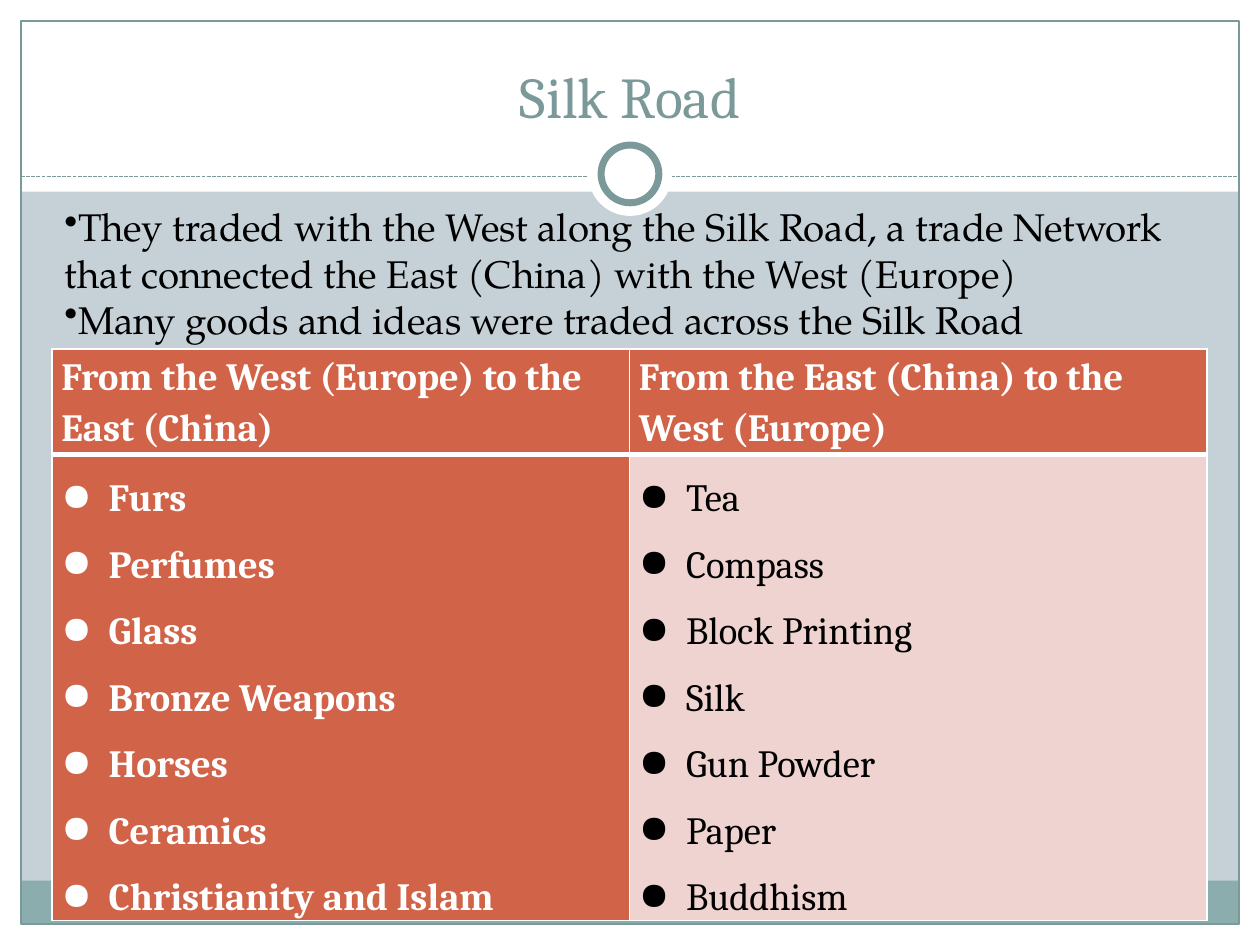
import pptx
import pptx.dml.color
import pptx.enum.dml
import pptx.enum.shapes
import pptx.enum.text
import pptx.oxml
import pptx.oxml.ns
import pptx.util

Pt = pptx.util.Pt
RGBColor = pptx.dml.color.RGBColor
SHAPE = pptx.enum.shapes.MSO_SHAPE
ANCHOR = pptx.enum.text.MSO_ANCHOR
ALIGN = pptx.enum.text.PP_ALIGN

WHITE = RGBColor(0xFF, 0xFF, 0xFF)
BLACK = RGBColor(0, 0, 0)
MIST = RGBColor(0xC5, 0xD1, 0xD7)
SAGE = RGBColor(0x7C, 0x99, 0x9A)
TEAL = RGBColor(0x8C, 0xAD, 0xAE)
RUST = RGBColor(0xD1, 0x63, 0x49)
BLUSH = RGBColor(0xEE, 0xD3, 0xD0)

WIDTH, HEIGHT, EDGE = 720, 540, 12
RULE_Y = 100.8
SERIF, PAGELLA = "Cambria", "TeX Gyre Pagella"

FACTS = [
    "They traded with the West along the Silk Road, a trade Network "
    "that connected the East (China) with the West (Europe)",
    "Many goods and ideas were traded across the Silk Road",
]
HEADINGS = ["From the West (Europe) to the East (China)",
            "From the East (China) to the West (Europe)"]
WEST_GOODS = ["Furs", "Perfumes", "Glass", "Bronze Weapons", "Horses",
              "Ceramics", "Christianity and Islam"]
EAST_GOODS = ["Tea", "Compass", "Block Printing", "Silk", "Gun Powder",
              "Paper", "Buddhism"]


def apply(target, values):
    for name, value in values.items():
        setattr(target, name, value)


def place(target, left, top, width, height):
    apply(target, {"left": Pt(left), "top": Pt(top),
                   "width": Pt(width), "height": Pt(height)})


def add_xml(parent, tag, content="", **attributes):
    listed = "".join(f' {name}="{value}"' for name, value in attributes.items())
    namespace = pptx.oxml.ns.nsdecls("a")
    parent.append(pptx.oxml.parse_xml(
        f"<a:{tag} {namespace}{listed}>{content}</a:{tag}>"))


def add_panel(slide, kind, box, fill=None, line=None, weight=0.75):
    panel = slide.shapes.add_shape(kind, *map(Pt, box))
    panel.shadow.inherit = False
    if fill is None:
        panel.fill.background()
    else:
        panel.fill.solid()
        panel.fill.fore_color.rgb = fill
    if line is None:
        panel.line.fill.background()
    else:
        panel.line.color.rgb = line
        panel.line.width = Pt(weight)


def add_rule(slide):
    rule = slide.shapes.add_connector(
        pptx.enum.shapes.MSO_CONNECTOR.STRAIGHT,
        Pt(EDGE), Pt(RULE_Y), Pt(WIDTH - EDGE), Pt(RULE_Y))
    rule.line.color.rgb = SAGE
    apply(rule.line, {"width": Pt(0.75),
                      "dash_style": pptx.enum.dml.MSO_LINE.SQUARE_DOT})
    add_xml(rule._element.spPr, "effectLst")


def add_ring(slide):
    for diameter, outline in ((48, None), (33, SAGE)):
        box = ((WIDTH - diameter) / 2, 99.4 - diameter / 2, diameter, diameter)
        add_panel(slide, SHAPE.OVAL, box, WHITE, outline, 4)


def write_lines(frame, lines, font, color, bullet=None, indent=0, spacing=None):
    for index, line in enumerate(lines):
        paragraph = frame.paragraphs[0] if index == 0 else frame.add_paragraph()
        run = paragraph.add_run()
        run.text = line
        apply(run.font, font)
        run.font.color.rgb = color
        apply(paragraph, spacing or {})
        if bullet:
            properties = paragraph._p.get_or_add_pPr()
            properties.set("marL", str(Pt(indent)))
            properties.set("indent", str(-Pt(indent)))
            add_xml(properties, "buChar", char=bullet)


def format_cell(cell, fill, top, bottom):
    apply(cell, {"margin_left": Pt(5.4), "margin_right": Pt(5.4),
                 "margin_top": 0, "margin_bottom": 0})
    properties = cell._tc.get_or_add_tcPr()
    for side, weight in {"L": 1, "R": 1, "T": top, "B": bottom}.items():
        add_xml(properties, f"ln{side}",
                f'<a:solidFill><a:srgbClr val="{WHITE}"/></a:solidFill>',
                w=Pt(weight))
    cell.fill.solid()
    cell.fill.fore_color.rgb = fill


def add_trade_table(slide):
    table = slide.shapes.add_table(
        2, 2, Pt(29.7), Pt(199.4), Pt(660), Pt(231)).table
    for row, height in zip(table.rows, (60.5, 170.6)):
        row.height = Pt(height)
    bold = {"name": SERIF, "size": Pt(22), "bold": True}
    regular = {**bold, "bold": False}
    columns = zip(HEADINGS, (WEST_GOODS, EAST_GOODS), (bold, regular),
                  (WHITE, BLACK), (RUST, BLUSH))
    for index, (heading, goods, font, color, fill) in enumerate(columns):
        header, body = table.cell(0, index), table.cell(1, index)
        format_cell(header, RUST, 1, 3)
        write_lines(header.text_frame, [heading], bold, WHITE,
                    spacing={"line_spacing": 1.15, "space_after": Pt(10)})
        format_cell(body, fill, 3, 1)
        write_lines(body.text_frame, goods, font, color, "●", 27,
                    {"line_spacing": 1.5})


def add_facts(slide):
    facts = slide.shapes.add_textbox(Pt(29.7), Pt(112.3), Pt(666), Pt(87))
    apply(facts.text_frame, {"word_wrap": True,
                             "vertical_anchor": ANCHOR.MIDDLE})
    write_lines(facts.text_frame, FACTS,
                {"name": PAGELLA, "size": Pt(22)}, BLACK, "•")


def add_title(slide):
    title = slide.shapes.title
    place(title, 24, 18, 672, 60)
    title.text_frame.vertical_anchor = ANCHOR.BOTTOM
    write_lines(title.text_frame, ["Silk Road"],
                {"name": SERIF, "size": Pt(33)}, SAGE,
                spacing={"alignment": ALIGN.CENTER})
    # Bring the title in front of the white header band
    title._element.getparent().append(title._element)


def main():
    deck = pptx.Presentation()
    apply(deck, {"slide_width": Pt(WIDTH), "slide_height": Pt(HEIGHT)})
    slide = deck.slides.add_slide(deck.slide_layouts[5])
    slide.background.fill.solid()
    slide.background.fill.fore_color.rgb = MIST

    # White margins, footer band and outline
    inner = WIDTH - 2 * EDGE
    for box, fill in (
        ((0, HEIGHT - EDGE, WIDTH, EDGE), WHITE),
        ((0, 0, WIDTH, 109.5), WHITE),
        ((0, 0, EDGE, HEIGHT), WHITE),
        ((WIDTH - EDGE, 0, EDGE, HEIGHT), WHITE),
        ((EDGE, 503.3, inner, 24.5), TEAL),
    ):
        add_panel(slide, SHAPE.RECTANGLE, box, fill)
    add_panel(slide, SHAPE.RECTANGLE,
              (EDGE, EDGE, inner, HEIGHT - 2 * EDGE), line=SAGE)

    # Header ornament
    add_rule(slide)
    add_ring(slide)

    # Content
    add_title(slide)
    add_trade_table(slide)
    add_facts(slide)
    deck.save("out.pptx")


if __name__ == "__main__":
    main()
